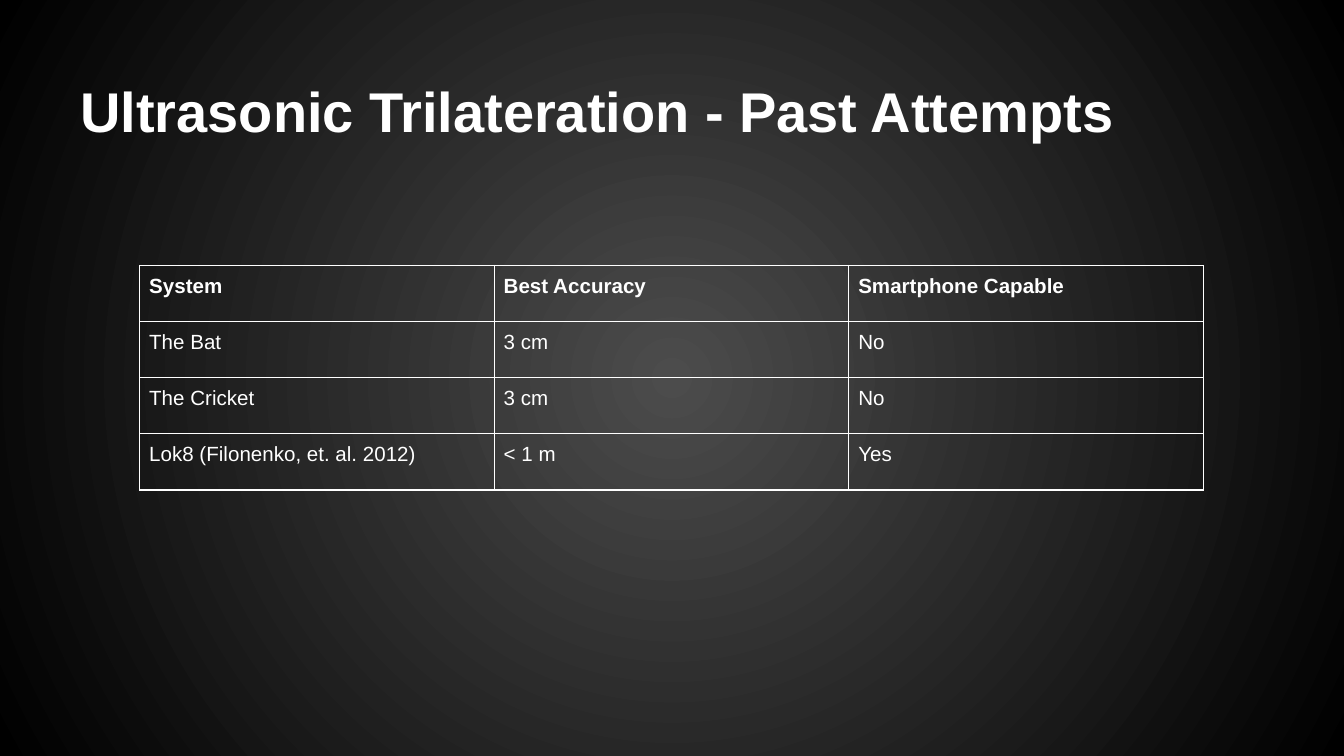
from dataclasses import dataclass

from lxml import etree
from pptx import Presentation
from pptx.dml.color import RGBColor
from pptx.enum.text import MSO_ANCHOR
from pptx.oxml.ns import qn
from pptx.util import Cm, Pt

BOTTOM = MSO_ANCHOR.BOTTOM
BLANK = 6


@dataclass(frozen=True)
class Theme:
    font: str = "Arial"
    ink: str = "FFFFFF"
    glow: str = "4C4C4C"
    edge: str = "000000"
    head: int = 30
    body: int = 11
    rule: float = 0.75


THEME = Theme()
TITLE = "Ultrasonic Trilateration - Past Attempts"
ROWS = [
    ("System", "Best Accuracy", "Smartphone Capable"),
    ("The Bat", "3 cm", "No"),
    ("The Cricket", "3 cm", "No"),
    ("Lok8 (Filonenko, et. al. 2012)", "< 1 m", "Yes"),
]


def paint(slide):
    """Fill the background with a glow that fades out from the centre."""
    fill = slide.background.fill
    fill.gradient()
    for stop, tint in zip(fill.gradient_stops, (THEME.glow, THEME.edge)):
        stop.color.rgb = RGBColor.from_string(tint)
    grad = next(slide.element.iter(qn("a:gradFill")))
    line = grad.find(qn("a:lin"))
    if line is not None:
        grad.remove(line)
    ring = etree.SubElement(grad, qn("a:path"), path="circle")
    sides = {side: "50000" for side in "ltrb"}
    etree.SubElement(ring, qn("a:fillToRect"), sides)


def pad(item, gap):
    item.margin_left = item.margin_right = gap
    item.margin_top = item.margin_bottom = gap


def write(frame, text, size, bold):
    frame.text = text
    font = frame.paragraphs[0].runs[0].font
    font.name = THEME.font
    font.size = Pt(size)
    font.bold = bold
    font.color.rgb = RGBColor.from_string(THEME.ink)


def add_title(slide):
    box = slide.shapes.add_textbox(Cm(1.27), Cm(0.58), Cm(22.86), Cm(2.39))
    frame = box.text_frame
    frame.word_wrap = True
    frame.vertical_anchor = BOTTOM
    pad(frame, Cm(0.25))
    write(frame, TITLE, THEME.head, True)


def rule(cell):
    """Draw a line on all four sides of a cell."""
    props = cell._tc.get_or_add_tcPr()
    for side in "LRTB":
        line = etree.SubElement(props, qn(f"a:ln{side}"), w=str(Pt(THEME.rule)))
        fill = etree.SubElement(line, qn("a:solidFill"))
        etree.SubElement(fill, qn("a:srgbClr"), val=THEME.ink)


def add_grid(slide):
    wide, high = Cm(6.7), Cm(1.06)
    count = len(ROWS[0])
    grid = slide.shapes.add_table(
        len(ROWS), count, Cm(2.64), Cm(5.02), wide * count, high * len(ROWS)
    ).table
    grid.first_row = grid.horz_banding = False
    for r, row in enumerate(ROWS):
        for c, text in enumerate(row):
            cell = grid.cell(r, c)
            pad(cell, Cm(0.18))
            rule(cell)
            cell.fill.background()
            write(cell.text_frame, text, THEME.body, r == 0)


def main():
    deck = Presentation()
    deck.slide_width, deck.slide_height = Cm(25.4), Cm(14.29)
    slide = deck.slides.add_slide(deck.slide_layouts[BLANK])
    paint(slide)
    add_title(slide)
    add_grid(slide)
    deck.save("out.pptx")


if __name__ == "__main__":
    main()
